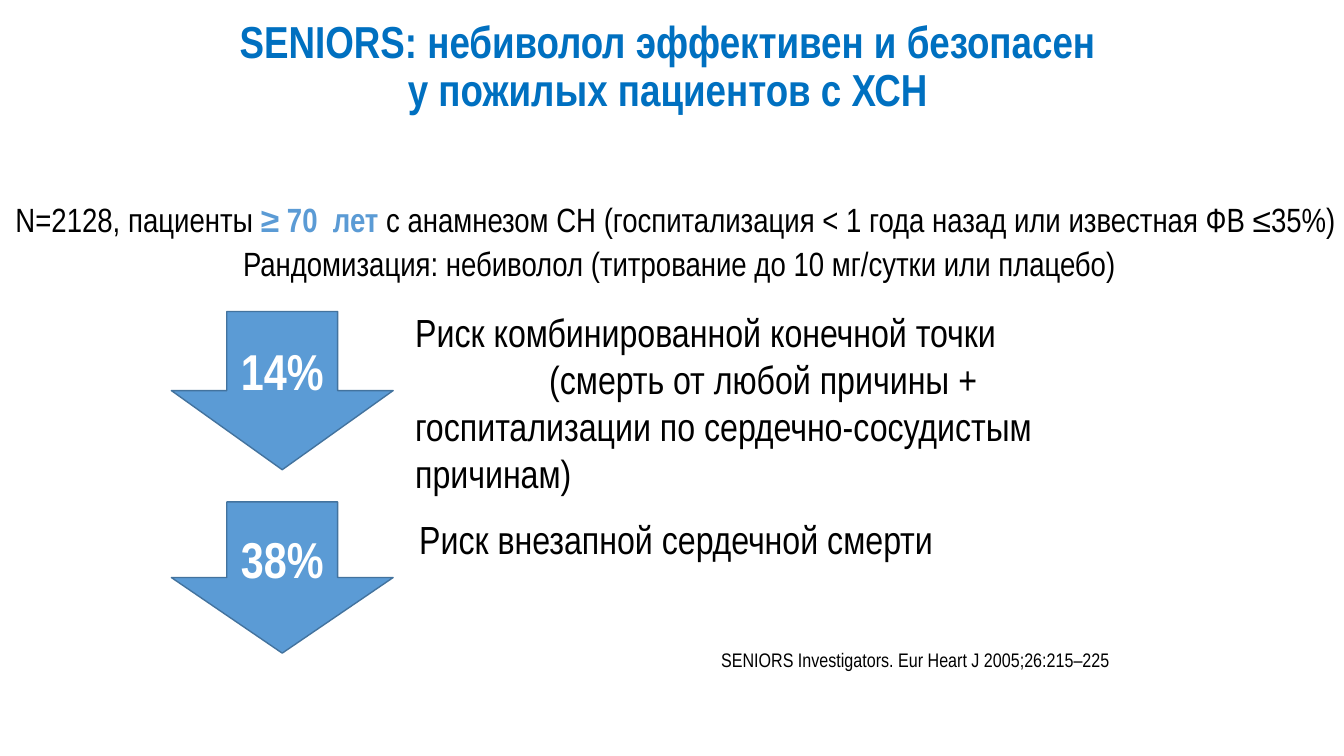
"""Build the slide on the SENIORS trial of nebivolol."""
import pptx
import pptx.dml.color
import pptx.enum.shapes
import pptx.enum.text
import pptx.util

RGB = pptx.dml.color.RGBColor
ALIGN = pptx.enum.text.PP_ALIGN
ANCHOR = pptx.enum.text.MSO_ANCHOR
AUTO = pptx.enum.text.MSO_AUTO_SIZE
TITLE_BLUE = RGB(0x00, 0x70, 0xC0)
ARROW_BLUE = RGB(0x5B, 0x9B, 0xD5)
ARROW_EDGE = RGB(0x43, 0x73, 0x9E)
BLACK = RGB(0, 0, 0)
WHITE = RGB(255, 255, 255)
FONT = "Arial Narrow"
WIDTH = pptx.util.Inches(13.33)
HEIGHT = pptx.util.Inches(7.5)


def area(left, top, width, height):
    """Turn percentages of the slide's size into lengths."""
    return (int(WIDTH * left / 100), int(HEIGHT * top / 100),
            int(WIDTH * width / 100), int(HEIGHT * height / 100))


def add_text(p, text, size, color=BLACK, bold=False):
    """Append formatted text to a paragraph, breaking lines at newlines."""
    for i, line in enumerate(text.split("\n")):
        if i:
            p.add_line_break()
        r = p.add_run()
        r.text = line
        r.font.name = FONT
        r.font.size = pptx.util.Pt(size)
        r.font.bold = bold
        r.font.color.rgb = color


def add_box(slide, box, paragraphs, size, align=ALIGN.LEFT, spacing=None,
            anchor=ANCHOR.TOP):
    """Add a wrapping text box; each paragraph is a list of (text, format)."""
    tf = slide.shapes.add_textbox(*area(*box)).text_frame
    tf.word_wrap = True
    tf.auto_size = AUTO.SHAPE_TO_FIT_TEXT
    tf.vertical_anchor = anchor
    for i, runs in enumerate(paragraphs):
        p = tf.add_paragraph() if i else tf.paragraphs[0]
        p.alignment = align
        p.line_spacing = spacing
        for text, style in runs:
            add_text(p, text, size, **style)
    return tf


def add_title(slide, box, text):
    """Place and fill the title placeholder."""
    sp = slide.shapes.title
    sp.left, sp.top, sp.width, sp.height = area(*box)
    tf = sp.text_frame
    tf.auto_size = AUTO.NONE
    tf.word_wrap = True
    tf.vertical_anchor = ANCHOR.MIDDLE
    p = tf.paragraphs[0]
    p.alignment = ALIGN.CENTER
    p.line_spacing = 0.9
    add_text(p, text, 32, TITLE_BLUE, True)


def add_arrow(slide, top, height, text):
    """Add a down arrow showing a risk reduction."""
    sp = slide.shapes.add_shape(pptx.enum.shapes.MSO_SHAPE.DOWN_ARROW,
                                *area(12.75, top, 16.5, height))
    sp.shadow.inherit = False
    sp.fill.solid()
    sp.fill.fore_color.rgb = ARROW_BLUE
    sp.line.color.rgb = ARROW_EDGE
    sp.line.width = pptx.util.Pt(1)
    tf = sp.text_frame
    tf.vertical_anchor = ANCHOR.MIDDLE
    p = tf.paragraphs[0]
    p.alignment = ALIGN.CENTER
    add_text(p, text, 36, WHITE, True)


def main():
    """Build and save the slide."""
    prs = pptx.Presentation()
    prs.slide_width, prs.slide_height = WIDTH, HEIGHT
    slide = prs.slides.add_slide(prs.slide_layouts[5])

    add_title(slide, (12.5, 0.67, 74.4, 16.67),
              "SENIORS: небиволол эффективен и безопасен\n"
              "у пожилых пациентов с ХСН")
    add_box(slide, (41.1, 85.07, 42.23, 4.53),
            [[("SENIORS Investigators. Eur Heart J 2005;26:215–225", {})]],
            14, ALIGN.RIGHT)

    endpoint = add_box(
        slide, (30.15, 40.13, 54, 26.5),
        [[("Риск комбинированной конечной точки", {})],
         [("(смерть от любой причины + госпитализации по "
           "сердечно-сосудистым причинам)", {})]], 28)
    properties = endpoint.paragraphs[1]._p.get_or_add_pPr()
    properties.set("marL", "0")
    properties.set("indent", str(pptx.util.Inches(1.33)))

    add_arrow(slide, 41.2, 20.93, "14%")
    add_arrow(slide, 66.4, 20, "38%")
    add_box(slide, (30.45, 67.47, 54, 7.6),
            [[("Риск внезапной сердечной смерти", {})]], 28)

    cohort = add_box(
        slide, (-0.15, 25.33, 101.4, 12.67),
        [[("N=2128, пациенты ", {}),
          ("≥ 70  лет ", {"color": ARROW_BLUE, "bold": True}),
          ("с анамнезом СН (госпитализация < 1 года назад "
           "или известная ФВ ≤35%) ", {})],
         [("Рандомизация: небиволол (титрование до 10 мг/сутки "
           "или плацебо)", {})]],
        24, ALIGN.CENTER, 1.1, ANCHOR.MIDDLE)
    cohort.margin_left = cohort.margin_right = pptx.util.Inches(0.07)
    cohort.margin_top = cohort.margin_bottom = pptx.util.Inches(0.03)

    prs.save("out.pptx")


if __name__ == "__main__":
    main()
